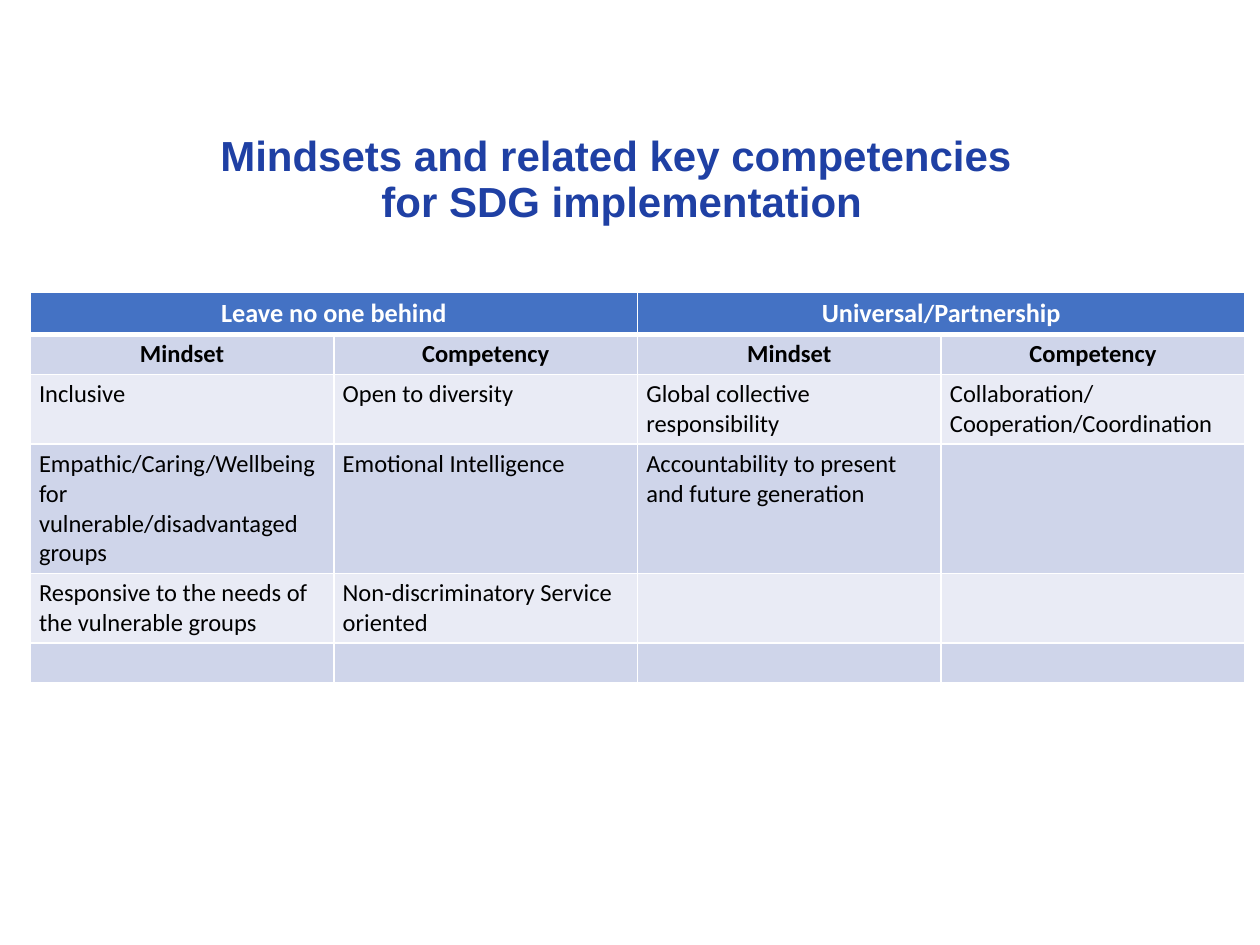
import lxml.etree
import pptx
import pptx.dml.color
import pptx.enum.text
import pptx.oxml.ns
import pptx.util
from pptx.util import Inches

COLORS = {
    "title": "1F40A4",
    "header": "4472C4",
    "band_dark": "CFD5EA",
    "band_light": "E9EBF5",
    "white": "FFFFFF",
    "black": "000000",
}
CENTER = pptx.enum.text.PP_ALIGN.CENTER
TEXT_SIZE = 14
HEADER_SIZE = 15
COLUMN_WIDTH = 2.41
ROW_HEIGHTS = [0.33, 0.3, 0.53, 0.75, 0.53, 0.3]

# Each group heading is a list of (text, size) runs.
GROUPS = [
    [("Leave no one behind", HEADER_SIZE)],
    [("Universal", HEADER_SIZE), ("/", TEXT_SIZE), ("Partnership", HEADER_SIZE)],
]
ROWS = [
    ["Mindset", "Competency"] * 2,
    ["Inclusive", "Open to diversity", "Global collective responsibility",
     "Collaboration/Cooperation/Coordination"],
    ["Empathic/Caring/Wellbeing for vulnerable/disadvantaged groups",
     "Emotional Intelligence", "Accountability to present and future generation", ""],
    ["Responsive to the needs of the vulnerable groups",
     "Non-discriminatory Service oriented", "", ""],
    ["", "", "", ""],
]


def rgb(name):
    return pptx.dml.color.RGBColor.from_string(COLORS[name])


def set_font(p, name, size, color, bold):
    p.font.name = name
    p.font.size = pptx.util.Pt(size)
    p.font.bold = bold
    p.font.color.rgb = rgb(color)


def add_borders(cell, bottom):
    """Draw white cell edges; bottom is the lower edge's width in points."""
    qn = pptx.oxml.ns.qn
    tcPr = cell._tc.get_or_add_tcPr()
    for side, width in (("L", 1), ("R", 1), ("T", 1), ("B", bottom)):
        ln = lxml.etree.SubElement(tcPr, qn(f"a:ln{side}"), w=str(pptx.util.Pt(width)))
        fill = lxml.etree.SubElement(ln, qn("a:solidFill"))
        lxml.etree.SubElement(fill, qn("a:srgbClr"), val=COLORS["white"])


def style_cell(cell, fill, bottom=1):
    add_borders(cell, bottom)
    cell.fill.solid()
    cell.fill.fore_color.rgb = rgb(fill)
    cell.margin_left = cell.margin_right = Inches(0.07)
    cell.margin_top = cell.margin_bottom = Inches(0.04)


def fill_group_heading(cell, runs):
    p = cell.text_frame.paragraphs[0]
    p.alignment = CENTER
    set_font(p, "Calibri", HEADER_SIZE, "white", True)
    for text, size in runs:
        r = p.add_run()
        r.text = text
        r.font.size = pptx.util.Pt(size)


def fill_body_cell(cell, text, heading):
    p = cell.text_frame.paragraphs[0]
    if text:
        p.text = text
    else:
        # An empty cell takes its line height from the end-of-paragraph mark.
        lxml.etree.SubElement(p._p, pptx.oxml.ns.qn("a:endParaRPr"),
                              sz=str(TEXT_SIZE * 100))
    if heading:
        p.alignment = CENTER
    set_font(p, "Calibri", TEXT_SIZE, "black", heading)


def add_competency_table(s):
    columns = len(ROWS[0])
    table = s.shapes.add_table(
        len(ROW_HEIGHTS), columns, Inches(0.24), Inches(2.32),
        Inches(COLUMN_WIDTH * columns), Inches(sum(ROW_HEIGHTS))).table
    for column in table.columns:
        column.width = Inches(COLUMN_WIDTH)
    for row, height in zip(table.rows, ROW_HEIGHTS):
        row.height = Inches(height)

    for c in range(columns):
        style_cell(table.cell(0, c), "header", bottom=3)
    for i, runs in enumerate(GROUPS):
        cell = table.cell(0, 2 * i)
        cell.merge(table.cell(0, 2 * i + 1))
        fill_group_heading(cell, runs)

    for r, texts in enumerate(ROWS, start=1):
        band = "band_dark" if r % 2 else "band_light"
        for c, text in enumerate(texts):
            cell = table.cell(r, c)
            style_cell(cell, band)
            fill_body_cell(cell, text, heading=r == 1)


def add_title(s, text):
    tf = s.shapes.add_textbox(Inches(0), Inches(0.89), Inches(9.87), Inches(1.09)).text_frame
    tf.word_wrap = True
    tf.vertical_anchor = pptx.enum.text.MSO_ANCHOR.MIDDLE
    p = tf.paragraphs[0]
    p.text = text
    p.alignment = CENTER
    p.line_spacing = 0.9
    set_font(p, "Arial", 24, "title", True)


def main():
    prs = pptx.Presentation()
    prs.slide_width, prs.slide_height = Inches(10), Inches(7.5)
    s = prs.slides.add_slide(prs.slide_layouts[6])
    add_competency_table(s)
    add_title(s, "Mindsets and related key competencies \vfor SDG implementation")
    prs.save("out.pptx")


if __name__ == "__main__":
    main()
